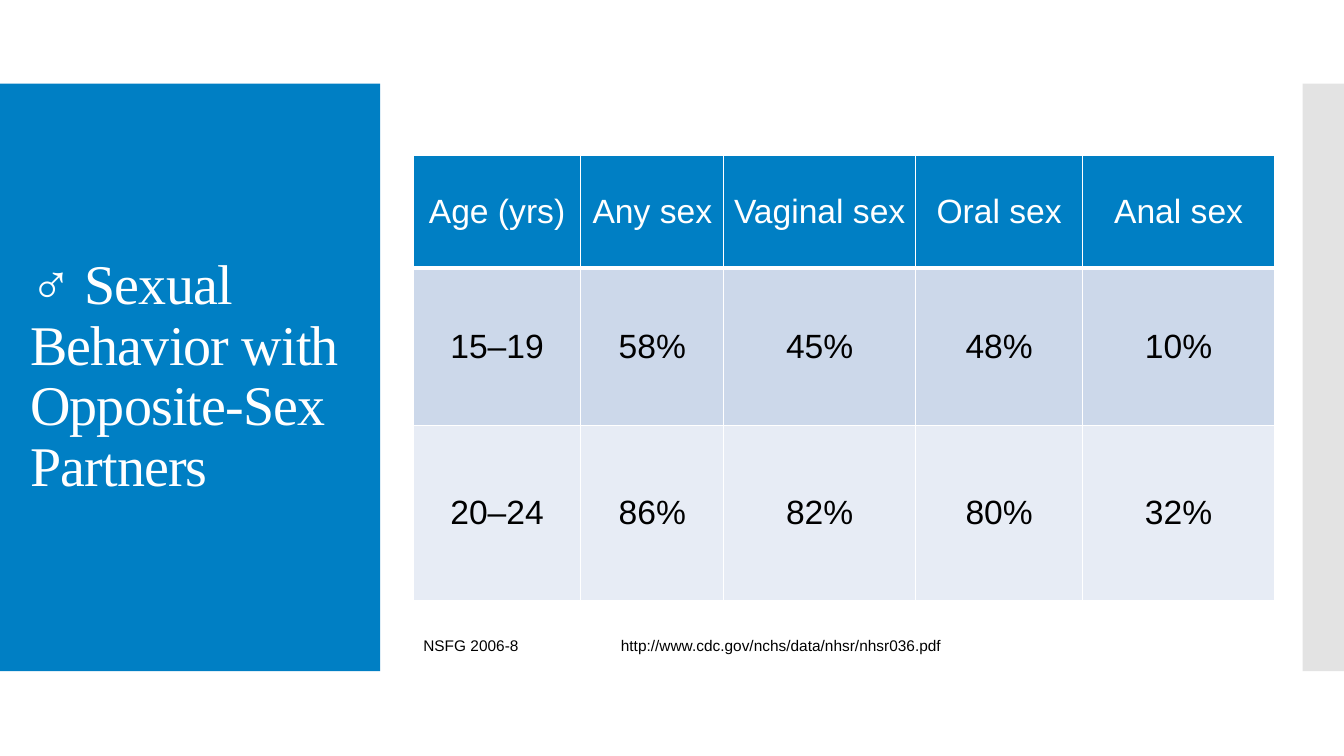
from lxml.etree import SubElement
from pptx import Presentation
from pptx.dml.color import RGBColor
from pptx.enum.shapes import MSO_SHAPE
from pptx.enum.text import MSO_ANCHOR, MSO_AUTO_SIZE, PP_ALIGN
from pptx.oxml.ns import qn
from pptx.util import Inches, Pt

BLUE = RGBColor(0x00, 0x7F, 0xC4)
GRAY = RGBColor(0xC8, 0xC8, 0xC8)
LIGHT_BLUE = RGBColor(0xCC, 0xD8, 0xEA)
PALE_BLUE = RGBColor(0xE7, 0xEC, 0xF5)
WHITE = RGBColor(0xFF, 0xFF, 0xFF)
BLACK = RGBColor(0x00, 0x00, 0x00)

TABLE_ROWS = [
    ["Age (yrs)", "Any sex", "Vaginal sex", "Oral sex", "Anal sex"],
    ["15–19", "58%", "45%", "48%", "10%"],
    ["20–24", "86%", "82%", "80%", "32%"],
]
COLUMN_WIDTHS = [1.66, 1.42, 1.9, 1.66, 1.9]
ROW_HEIGHTS = [1.12, 1.56, 1.74]
ROW_FILLS = [BLUE, LIGHT_BLUE, PALE_BLUE]


def write_text(text_frame, text, *, size, font="Arial", color=BLACK,
               align=PP_ALIGN.LEFT, line_spacing=None, character_spacing=None):
    """Fill the frame with one paragraph; a vertical tab is a line break."""
    paragraph = text_frame.paragraphs[0]
    paragraph.text = text
    paragraph.alignment = align
    paragraph.line_spacing = line_spacing
    for run in paragraph.runs:
        run.font.name = font
        run.font.size = Pt(size)
        run.font.bold = False
        run.font.color.rgb = color
        if character_spacing is not None:
            run.font._element.set("spc", str(round(character_spacing * 100)))


def set_borders(cell, bottom_width):
    """Draw white lines on all four sides, 1 pt except the bottom one."""
    properties = cell._tc.get_or_add_tcPr()
    widths = {"lnL": 1, "lnR": 1, "lnT": 1, "lnB": bottom_width}
    for side, width in widths.items():
        line = SubElement(properties, qn(f"a:{side}"), w=str(Pt(width)))
        fill = SubElement(line, qn("a:solidFill"))
        SubElement(fill, qn("a:srgbClr"), val=str(WHITE))


class SlideBuilder:
    def __init__(self, presentation):
        self.slide = presentation.slides.add_slide(presentation.slide_layouts[5])

    def add_panel(self, left, top, width, height, color, opacity=100):
        """Add a plain rectangle behind the title."""
        panel = self.slide.shapes.add_shape(
            MSO_SHAPE.RECTANGLE, Inches(left), Inches(top), Inches(width), Inches(height))
        panel.shadow.inherit = False
        panel.fill.solid()
        panel.fill.fore_color.rgb = color
        panel.line.fill.background()
        if opacity < 100:
            color_element = panel.element.spPr.find(".//" + qn("a:srgbClr"))
            SubElement(color_element, qn("a:alpha"), val=str(opacity * 1000))
        self.slide.shapes.title.element.addprevious(panel.element)

    def set_title(self, text, left, top, width, height):
        title = self.slide.shapes.title
        title.left, title.top = Inches(left), Inches(top)
        title.width, title.height = Inches(width), Inches(height)
        text_frame = title.text_frame
        text_frame.word_wrap = True
        text_frame.auto_size = MSO_AUTO_SIZE.NONE
        text_frame.vertical_anchor = MSO_ANCHOR.MIDDLE
        write_text(text_frame, text, size=40, font="Times New Roman", color=WHITE,
                   line_spacing=0.9, character_spacing=-0.6)

    def add_table(self, left, top):
        table = self.slide.shapes.add_table(
            len(TABLE_ROWS), len(COLUMN_WIDTHS), Inches(left), Inches(top),
            Inches(sum(COLUMN_WIDTHS)), Inches(sum(ROW_HEIGHTS))).table
        table.horz_banding = False
        for column, width in zip(table.columns, COLUMN_WIDTHS):
            column.width = Inches(width)
        for row_index, (row, values) in enumerate(zip(table.rows, TABLE_ROWS)):
            is_header = row_index == 0
            row.height = Inches(ROW_HEIGHTS[row_index])
            for cell, value in zip(row.cells, values):
                set_borders(cell, bottom_width=3 if is_header else 1)
                cell.fill.solid()
                cell.fill.fore_color.rgb = ROW_FILLS[row_index]
                cell.vertical_anchor = MSO_ANCHOR.MIDDLE
                cell.margin_left = cell.margin_right = Inches(0.09)
                cell.margin_top = cell.margin_bottom = Inches(0.04)
                write_text(cell.text_frame, value, size=24, align=PP_ALIGN.CENTER,
                           color=WHITE if is_header else BLACK)

    def add_source_note(self, text, left, top, width, height):
        text_box = self.slide.shapes.add_textbox(
            Inches(left), Inches(top), Inches(width), Inches(height))
        text_box.text_frame.word_wrap = False
        text_box.text_frame.auto_size = MSO_AUTO_SIZE.SHAPE_TO_FIT_TEXT
        write_text(text_box.text_frame, text, size=11)


def main():
    presentation = Presentation()
    presentation.slide_width = Inches(13.33)
    presentation.slide_height = Inches(7.5)
    builder = SlideBuilder(presentation)
    builder.add_panel(0, 0.83, 3.77, 5.83, BLUE)
    builder.add_panel(12.92, 0.83, 0.41, 5.83, GRAY, opacity=50)
    builder.set_title("♂ Sexual Behavior with\vOpposite-Sex Partners", 0.2, 1.23, 3.4, 5.03)
    builder.add_table(4.1, 1.54)
    builder.add_source_note("http://www.cdc.gov/nchs/data/nhsr/nhsr036.pdf", 6.06, 6.26, 3.4, 0.29)
    builder.add_source_note("NSFG 2006-8", 4.1, 6.26, 1.15, 0.29)
    presentation.save("out.pptx")


if __name__ == "__main__":
    main()
